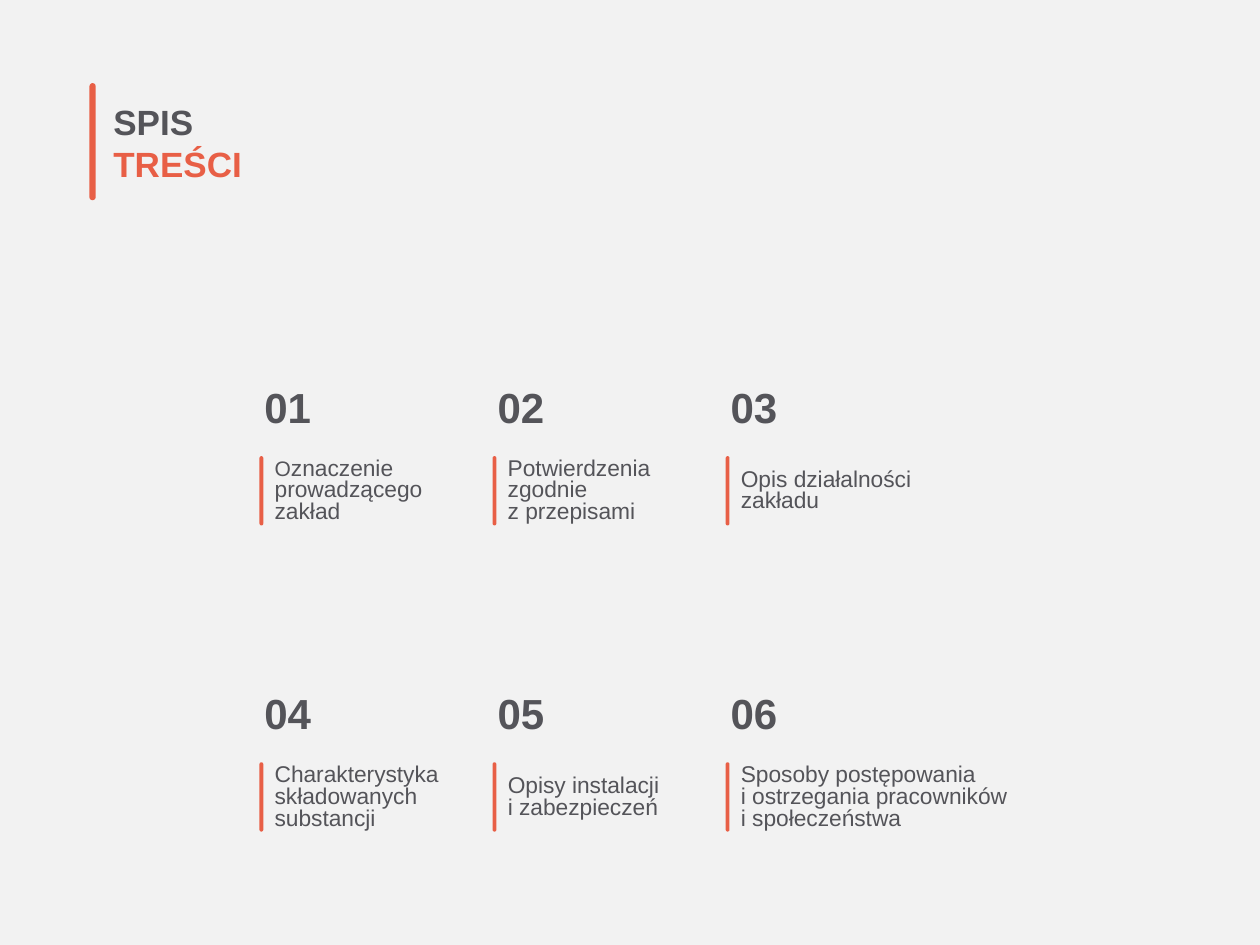
from dataclasses import dataclass

from pptx import Presentation
from pptx.dml.color import RGBColor
from pptx.enum.shapes import MSO_SHAPE as Shape
from pptx.enum.text import MSO_ANCHOR as Anchor
from pptx.util import Inches, Pt


@dataclass(frozen=True)
class Theme:
    font: str = "Arial"
    background: RGBColor = RGBColor(0xF2, 0xF2, 0xF2)
    text: RGBColor = RGBColor(0x54, 0x54, 0x59)
    accent: RGBColor = RGBColor(0xE8, 0x5F, 0x46)
    title_size: Pt = Pt(20)
    number_size: Pt = Pt(24)
    caption_size: Pt = Pt(13)
    initial_size: Pt = Pt(12)


THEME = Theme()
COLUMNS = 3
GRID_LEFT, GRID_TOP = 2, 2.93
COLUMN_STEP, ROW_STEP = 1.85, 2.43

ENTRIES = [
    (1.31, ["Oznaczenie prowadzącego zakład"]),
    (1.57, ["Potwierdzenia zgodnie", "z przepisami"]),
    (1.77, ["Opis działalności zakładu"]),
    (1.57, ["Charakterystyka składowanych substancji"]),
    (1.31, ["Opisy instalacji i zabezpieczeń"]),
    (2.51, ["Sposoby postępowania", "i ostrzegania pracowników", "i społeczeństwa"]),
]


def add_bar(slide, left, top, width, height):
    bar = slide.shapes.add_shape(
        Shape.ROUNDED_RECTANGLE, Inches(left), Inches(top), Inches(width), Inches(height)
    )
    bar.adjustments[0] = 0.5
    bar.shadow.inherit = False
    bar.fill.solid()
    bar.fill.fore_color.rgb = THEME.accent
    bar.line.fill.background()


def add_text(slide, left, top, width, height, lines, size, bold=False,
             spacing=None, margin=0.02, anchor=Anchor.MIDDLE):
    box = slide.shapes.add_textbox(Inches(left), Inches(top), Inches(width), Inches(height))
    frame = box.text_frame
    frame.word_wrap = True
    frame.vertical_anchor = anchor
    frame.margin_left = frame.margin_right = Inches(margin)
    frame.margin_top = frame.margin_bottom = Inches(margin)
    frame.text = "\n".join(lines)
    for paragraph in frame.paragraphs:
        paragraph.line_spacing = spacing
        paragraph.font.name = THEME.font
        paragraph.font.size = size
        paragraph.font.bold = bold
        paragraph.font.color.rgb = THEME.text
    return frame


def shrink_initial(paragraph):
    text = paragraph.text
    paragraph.runs[0].text = text[0]
    paragraph.runs[0].font.size = THEME.initial_size
    paragraph.add_run().text = text[1:]


def add_title(slide):
    frame = add_text(slide, 0.88, 0.68, 1.93, 0.9, ["SPIS", "TREŚCI"],
                     THEME.title_size, bold=True)
    frame.paragraphs[1].font.color.rgb = THEME.accent
    add_bar(slide, 0.71, 0.66, 0.05, 0.93)


def add_entry(slide, index, caption_width, lines):
    row, column = divmod(index, COLUMNS)
    left = GRID_LEFT + column * COLUMN_STEP
    top = GRID_TOP + row * ROW_STEP
    caption = add_text(slide, left + 0.16, top + 0.71, caption_width, 0.52, lines,
                       THEME.caption_size, spacing=0.8)
    add_bar(slide, left + 0.06, top + 0.69, 0.03, 0.55)
    add_text(slide, left, top, 0.68, 0.77, [f"{index + 1:02}"], THEME.number_size,
             bold=True, margin=0.1, anchor=Anchor.TOP)
    return caption


def main():
    presentation = Presentation()
    presentation.slide_width = Inches(10)
    presentation.slide_height = Inches(7.5)
    slide = presentation.slides.add_slide(presentation.slide_layouts[6])
    slide.background.fill.solid()
    slide.background.fill.fore_color.rgb = THEME.background

    captions = [add_entry(slide, index, *entry) for index, entry in enumerate(ENTRIES)]
    shrink_initial(captions[0].paragraphs[0])
    add_title(slide)
    presentation.save("out.pptx")


if __name__ == "__main__":
    main()
